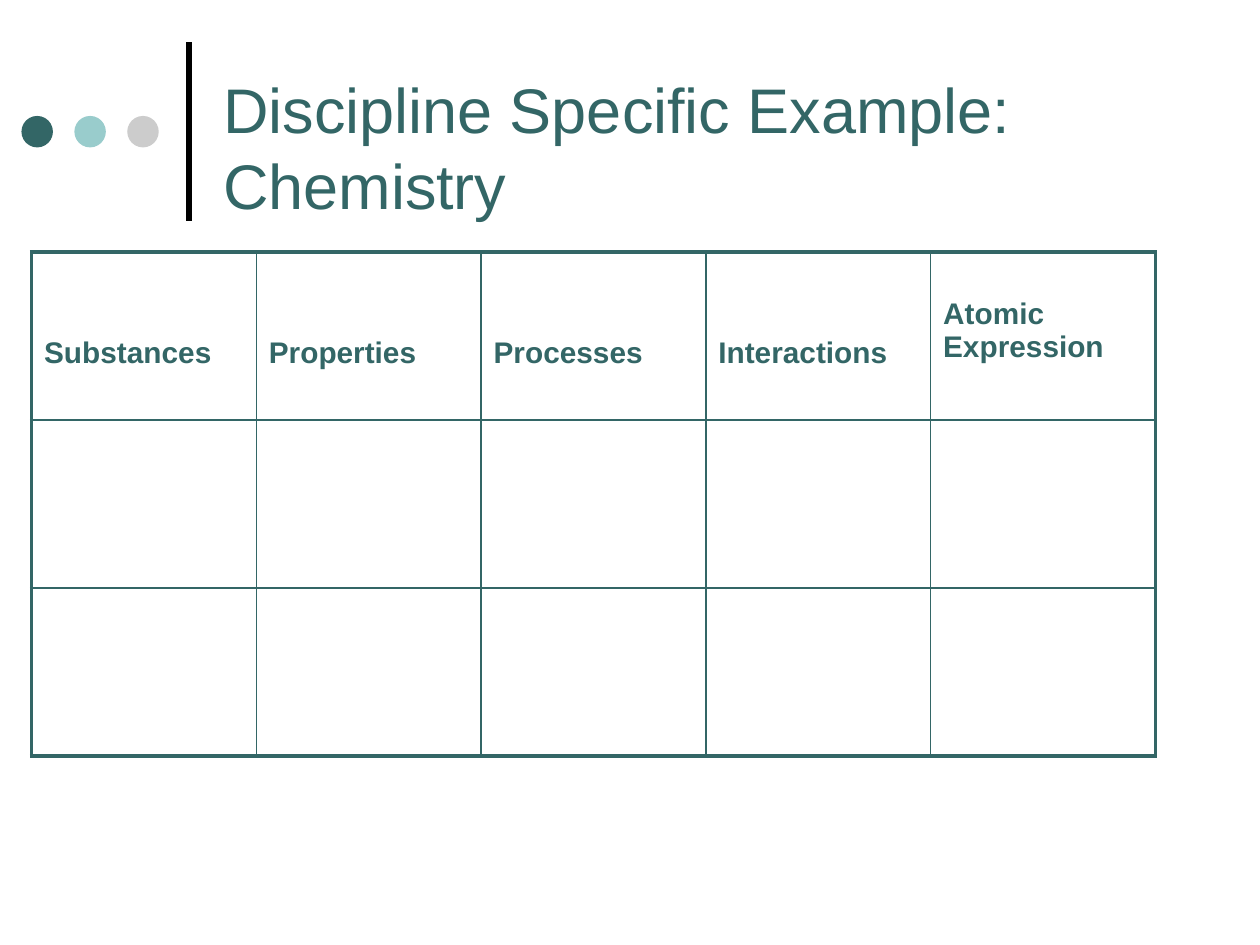
from lxml import etree
from pptx import Presentation
from pptx.dml.color import RGBColor
from pptx.enum.shapes import MSO_CONNECTOR, MSO_SHAPE
from pptx.enum.text import MSO_ANCHOR, PP_ALIGN
from pptx.oxml.ns import qn
from pptx.util import Inches, Pt

OVAL, STRAIGHT = MSO_SHAPE.OVAL, MSO_CONNECTOR.STRAIGHT
TOP, BOTTOM, LEFT = MSO_ANCHOR.TOP, MSO_ANCHOR.BOTTOM, PP_ALIGN.LEFT
TEAL = "336666"


def paint(color_format, hex_color):
    color_format.rgb = RGBColor.from_string(hex_color)


def add_border(cell, side, points):
    line = etree.SubElement(cell._tc.get_or_add_tcPr(), qn(f"a:ln{side}"), w=str(Pt(points)))
    fill = etree.SubElement(line, qn("a:solidFill"))
    etree.SubElement(fill, qn("a:srgbClr"), val=TEAL)


prs = Presentation()
prs.slide_width, prs.slide_height = Inches(10), Inches(7.5)
slide = prs.slides.add_slide(prs.slide_layouts[5])

# Vertical rule beside the title
rule = slide.shapes.add_connector(STRAIGHT, Inches(1.5), Inches(1.75), Inches(1.5), Inches(0.33))
paint(rule.line.color, "000000")
rule.line.width = Pt(3)
etree.SubElement(rule._element.spPr, qn("a:effectLst"))

# Row of dots
for i, dot_color in enumerate([TEAL, "99CCCC", "CCCCCC"]):
    dot = slide.shapes.add_shape(
        OVAL, Inches(0.17 + 0.42 * i), Inches(0.92), Inches(0.25), Inches(0.25))
    dot.shadow.inherit = False
    dot.fill.solid()
    paint(dot.fill.fore_color, dot_color)
    dot.line.fill.background()

# Title
title = slide.shapes.title
title.left, title.top = Inches(1.67), Inches(0.5)
title.width, title.height = Inches(7.42), Inches(1.31)
title.text_frame.text = "Discipline Specific Example: Chemistry"
title.text_frame.word_wrap = True
title.text_frame.vertical_anchor = BOTTOM
heading = title.text_frame.paragraphs[0]
heading.alignment = LEFT
heading.font.name, heading.font.size = "Arial", Pt(36)
paint(heading.font.color, TEAL)

# Table: header text and its distance from the top of the row
headers = [("Substances", 0.67), ("Properties", 0.67), ("Processes", 0.67),
           ("Interactions", 0.67), ("Atomic Expression", 0.36)]
n_rows, n_cols = 3, len(headers)
table = slide.shapes.add_table(
    n_rows, n_cols, Inches(0.25), Inches(2), Inches(8.92), Inches(4)).table
table.first_row = table.horz_banding = False

# Heavy outer frame, thin inner grid
for r in range(n_rows):
    for c in range(n_cols):
        cell = table.cell(r, c)
        on_frame = {"L": c == 0, "R": c == n_cols - 1, "T": r == 0, "B": r == n_rows - 1}
        for side, heavy in on_frame.items():
            add_border(cell, side, 2.25 if heavy else 1)
        cell.fill.background()

# Header row
for c, (label, offset) in enumerate(headers):
    cell = table.cell(0, c)
    cell.text_frame.text = label
    cell.vertical_anchor = TOP
    cell.margin_top = Inches(offset)
    font = cell.text_frame.paragraphs[0].runs[0].font
    font.name, font.size, font.bold = "Arial", Pt(17), True
    paint(font.color, TEAL)

prs.save("out.pptx")
